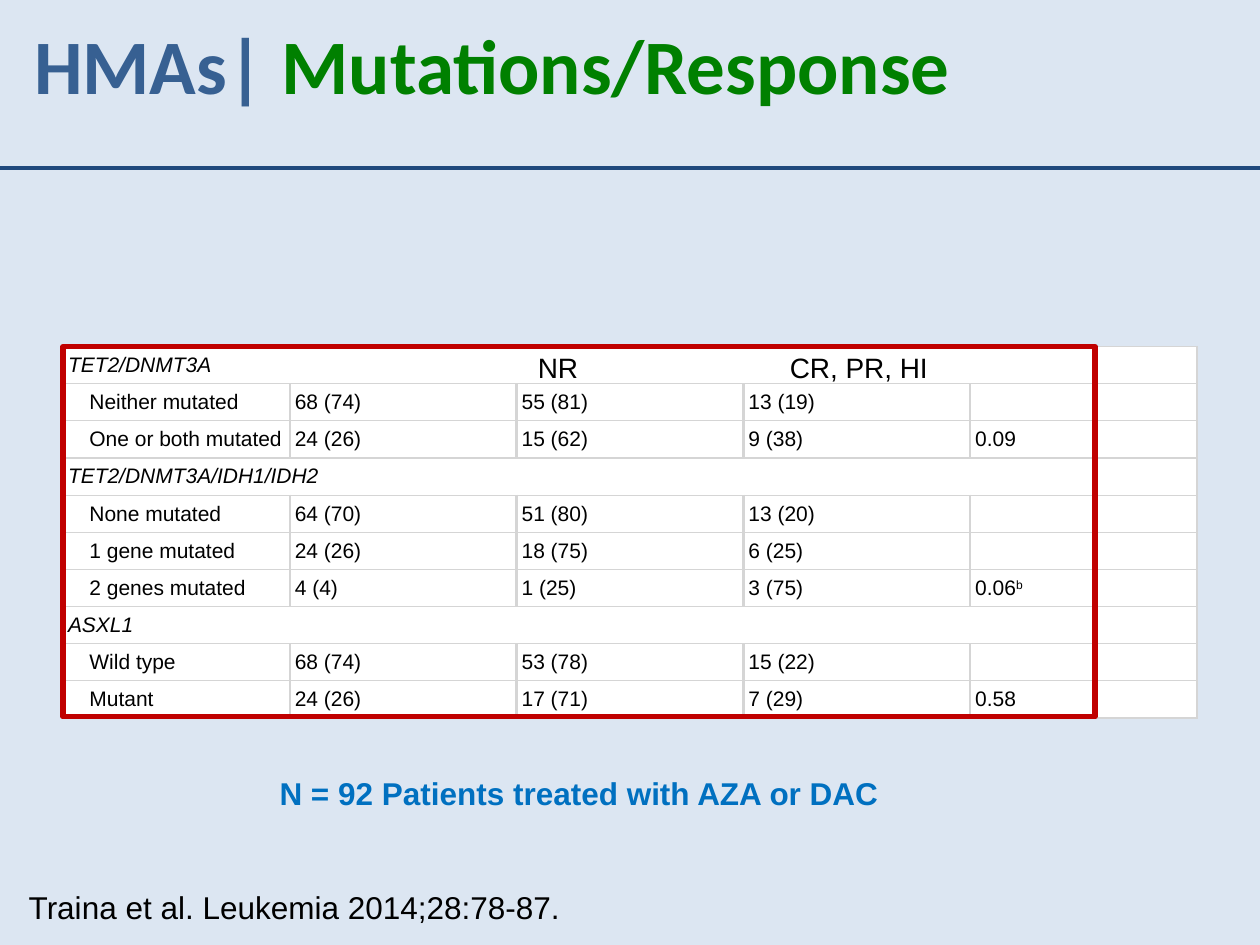
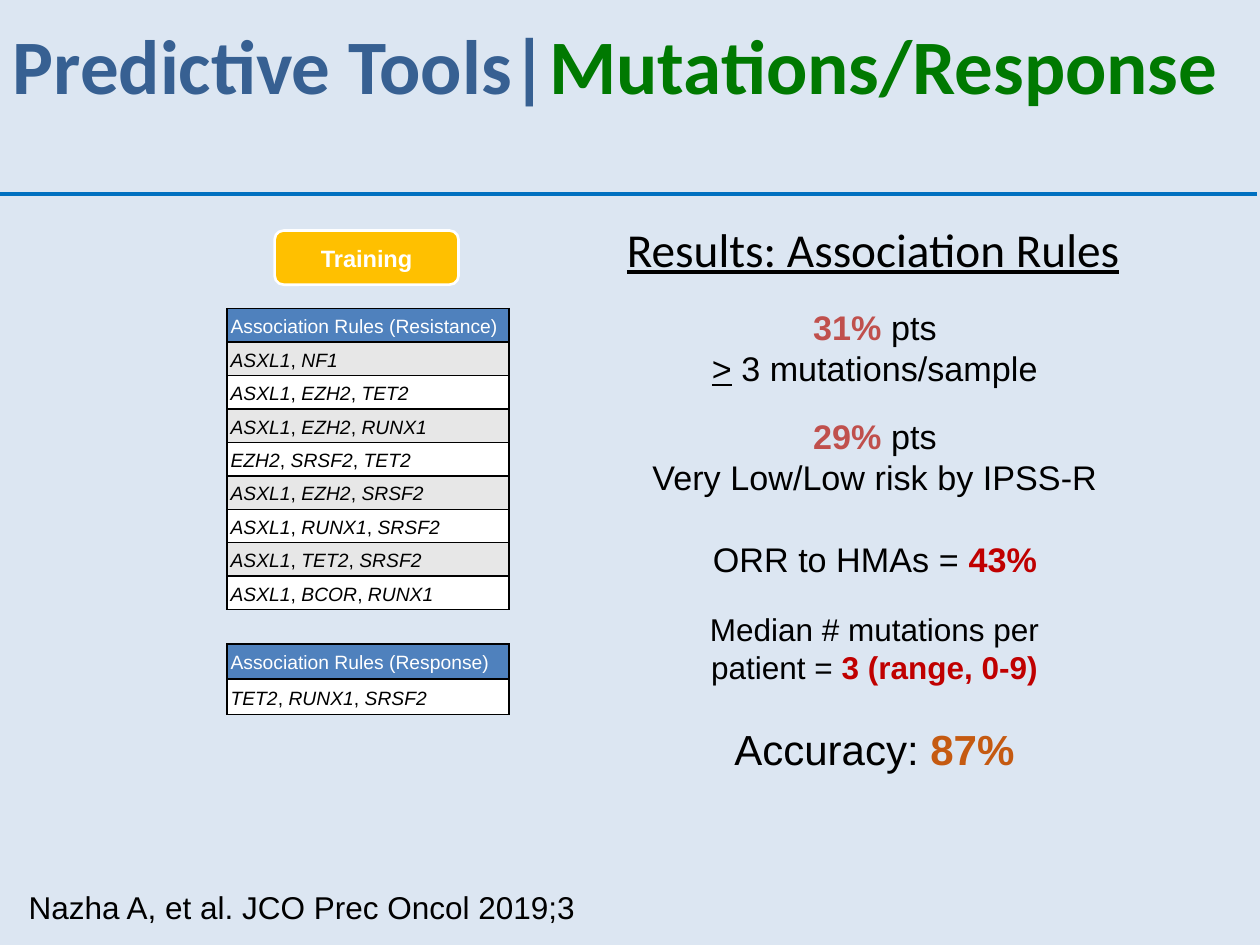
from typing import NamedTuple, Optional

import pptx
import pptx.dml.color
import pptx.enum.shapes
import pptx.enum.text
import pptx.oxml.ns
import pptx.util
from lxml import etree

Inches = pptx.util.Inches
Pt = pptx.util.Pt
qn = pptx.oxml.ns.qn
ALIGN = pptx.enum.text.PP_ALIGN
ANCHOR = pptx.enum.text.MSO_ANCHOR
SHAPE = pptx.enum.shapes.MSO_SHAPE

COLORS = {
    "background": "DCE6F2", "topic": "376092", "green": "008000", "dark_green": "007901",
    "navy": "1F497D", "blue": "0070C0", "black": "000000", "white": "FFFFFF",
    "grid": "D5D5D5", "header": "4F81BD", "band": "E7E7E7", "red": "C00000",
    "brick": "C0504D", "orange": "C55A11", "gold": "FFC000",
}


class Box(NamedTuple):
    left: float
    top: float
    width: float
    height: float

    def lengths(self) -> list:
        return [Inches(value) for value in self]


class Run(NamedTuple):
    text: str
    color: str = "black"
    bold: bool = False
    italic: bool = False
    underline: bool = False
    raised: bool = False


class Line(NamedTuple):
    runs: list
    size: float
    before: float = 0


class Borders(NamedTuple):
    color: str
    left: float
    right: float
    top: float
    bottom: float


class Mutations(NamedTuple):
    label: str
    values: tuple = ()
    footnote: str = ""


def rgb(name: str) -> pptx.dml.color.RGBColor:
    return pptx.dml.color.RGBColor.from_string(COLORS[name])


# Text
def write(paragraph, text: str, *, size: float, color: str = "black", font: str = "Arial",
          bold: bool = False, italic: bool = False, underline: bool = False,
          raised: bool = False) -> None:
    if not text:
        etree.SubElement(paragraph._p, qn("a:endParaRPr"), sz=str(int(size * 100)))
        return
    run = paragraph.add_run()
    run.text = text
    run.font.size, run.font.name = Pt(size), font
    run.font.bold, run.font.italic, run.font.underline = bold, italic, underline
    run.font.color.rgb = rgb(color)
    if raised:
        run._r.get_or_add_rPr().set("baseline", "30000")


def add_text(slide, box: Box, lines: list, *, align=ALIGN.LEFT, anchor=ANCHOR.TOP,
             font: str = "Arial"):
    frame = slide.shapes.add_textbox(*box.lengths()).text_frame
    frame.word_wrap, frame.vertical_anchor = True, anchor
    for index, line in enumerate(lines):
        paragraph = frame.add_paragraph() if index else frame.paragraphs[0]
        paragraph.alignment = align
        if line.before:
            paragraph.space_before = Pt(line.before)
        for run in line.runs:
            write(paragraph, size=line.size, font=font, **run._asdict())
    return frame


# Parts shared by the slides
def add_slide(deck, topic: str, title_left: float, title_color: str,
              rule_top: float, rule_right: float, rule_color: str, citation: str):
    slide = deck.slides.add_slide(deck.slide_layouts[5])
    slide.background.fill.solid()
    slide.background.fill.fore_color.rgb = rgb("background")

    title = slide.shapes.title
    title.left, title.top, title.width, title.height = Box(
        title_left, 0.09, 10 - title_left, 0.92).lengths()
    frame = title.text_frame
    frame.auto_size = pptx.enum.text.MSO_AUTO_SIZE.NONE
    frame.vertical_anchor = ANCHOR.TOP
    heading = frame.paragraphs[0]
    heading.alignment = ALIGN.LEFT
    for text, color in ((topic, "topic"), ("Mutations/Response", title_color)):
        write(heading, text, size=44, color=color, font="Calibri", bold=True)

    rule = slide.shapes.add_connector(
        pptx.enum.shapes.MSO_CONNECTOR.STRAIGHT,
        Inches(0), Inches(rule_top), Inches(rule_right), Inches(rule_top))
    rule.line.color.rgb, rule.line.width = rgb(rule_color), Pt(2.25)
    etree.SubElement(rule._element.spPr, qn("a:effectLst"))

    add_text(slide, Box(0.13, 7, 5, 0.4), [Line([Run(citation)], 18)])
    return slide


def add_frame(slide, preset, box: Box, line_color: str, line_width: float,
              fill: Optional[str] = None):
    shape = slide.shapes.add_shape(preset, *box.lengths())
    shape.shadow.inherit = False
    if fill:
        shape.fill.solid()
        shape.fill.fore_color.rgb = rgb(fill)
    else:
        shape.fill.background()
    shape.line.color.rgb, shape.line.width = rgb(line_color), Pt(line_width)
    return shape


# Tables
def add_table(slide, rows: int, columns: int, box: Box):
    table = slide.shapes.add_table(rows, columns, *box.lengths()).table
    table.first_row = table.horz_banding = False
    return table


def format_cell(cell, fill: str, borders: Borders, side: float, edge: float) -> None:
    cell.fill.solid()
    cell.fill.fore_color.rgb = rgb(fill)
    cell.vertical_anchor = ANCHOR.MIDDLE
    cell.margin_left = cell.margin_right = Inches(side)
    cell.margin_top = cell.margin_bottom = Inches(edge)
    widths = (borders.left, borders.right, borders.top, borders.bottom)
    for index, (tag, width) in enumerate(zip(("lnL", "lnR", "lnT", "lnB"), widths)):
        border = etree.Element(qn(f"a:{tag}"), w=str(Pt(width)))
        solid = etree.SubElement(border, qn("a:solidFill"))
        etree.SubElement(solid, qn("a:srgbClr"), val=COLORS[borders.color])
        cell._tc.get_or_add_tcPr().insert(index, border)


def add_response_table(slide, box: Box, groups: list) -> None:
    columns = 5
    table = add_table(slide, len(groups), columns, box)
    for row, group in enumerate(groups):
        is_heading = not group.values
        if is_heading:
            table.cell(row, 0).merge(table.cell(row, columns - 1))
        bottom = 1.5 if row == len(groups) - 1 else 0.75
        for column, text in enumerate((group.label, *group.values)):
            cell = table.cell(row, column)
            format_cell(cell, "white", Borders("grid", 1.5, 1.5, 0.75, bottom), 0.04, 0.04)
            if column == 0 and not is_heading:
                cell.margin_left = Inches(0.21)
            write(cell.text_frame.paragraphs[0], text, size=12, italic=is_heading)
        if group.footnote:
            write(cell.text_frame.paragraphs[0], group.footnote, size=12, raised=True)


def add_rules_table(slide, box: Box, outcome: str, rules: list) -> None:
    table = add_table(slide, len(rules) + 1, 1, box)
    fills = ["header"] + [("band", "white")[i % 2] for i in range(len(rules))]
    if len(rules) == 1:
        fills[1] = "white"
    for row, fill in enumerate(fills):
        cell = table.cell(row, 0)
        format_cell(cell, fill, Borders("black", 1, 1, 1, 1), 0.03, 0)
        paragraph = cell.text_frame.paragraphs[0]
        paragraph.line_spacing = 1.15
        if row == 0:
            write(paragraph, f"Association Rules ({outcome})", size=11, color="white")
            continue
        for index, gene in enumerate(rules[row - 1].split()):
            if index:
                write(paragraph, ", ", size=11)
            write(paragraph, gene, size=11, italic=True)


# Slide 1: mutations and response to HMAs
def build_hma_slide(deck) -> None:
    slide = add_slide(deck, "HMAs| ", 0.17, "green", 1.33, 10, "navy",
                      "Traina et al. Leukemia 2014;28:78-87.")
    add_response_table(slide, Box(0.5, 2.75, 9, 2.95), [
        Mutations("TET2/DNMT3A"),
        Mutations("Neither mutated", ("68 (74)", "55 (81)", "13 (19)", "")),
        Mutations("One or both mutated", ("24 (26)", "15 (62)", "9 (38)", "0.09")),
        Mutations("TET2/DNMT3A/IDH1/IDH2"),
        Mutations("None mutated", ("64 (70)", "51 (80)", "13 (20)", "")),
        Mutations("1 gene mutated", ("24 (26)", "18 (75)", "6 (25)", "")),
        Mutations("2 genes mutated", ("4 (4)", "1 (25)", "3 (75)", "0.06"), "b"),
        Mutations("ASXL1"),
        Mutations("Wild type", ("68 (74)", "53 (78)", "15 (22)", "")),
        Mutations("Mutant", ("24 (26)", "17 (71)", "7 (29)", "0.58")),
    ])
    add_frame(slide, SHAPE.RECTANGLE, Box(0.5, 2.75, 8.19, 2.94), "red", 3)
    add_text(slide, Box(2.12, 6.09, 5.75, 0.4),
             [Line([Run("N = 92 Patients treated with AZA or DAC", "blue", bold=True)], 18)])

    # Response headings, the second one on a tab stop
    responses = add_text(slide, Box(4.17, 2.73, 4.17, 0.37),
                         [Line([Run("NR\tCR, PR, HI")], 16)])
    stops = etree.SubElement(responses.paragraphs[0]._p.get_or_add_pPr(), qn("a:tabLst"))
    etree.SubElement(stops, qn("a:tab"), pos=str(Inches(2)), algn="l")


# Slide 2: association rules
def build_rules_slide(deck) -> None:
    slide = add_slide(deck, "Predictive Tools|", 0, "dark_green", 1.54, 9.98, "blue",
                      "Nazha A, et al. JCO Prec Oncol 2019;3")

    training = add_frame(slide, SHAPE.ROUNDED_RECTANGLE, Box(2.18, 1.83, 1.46, 0.43),
                         "white", 1.5, fill="gold")
    training.text_frame.vertical_anchor = ANCHOR.MIDDLE
    label = training.text_frame.paragraphs[0]
    label.alignment = ALIGN.CENTER
    write(label, "Training", size=13.5, color="white", bold=True)

    add_rules_table(slide, Box(1.8, 2.45, 2.24, 2.39), "Resistance", [
        "ASXL1 NF1", "ASXL1 EZH2 TET2", "ASXL1 EZH2 RUNX1", "EZH2 SRSF2 TET2",
        "ASXL1 EZH2 SRSF2", "ASXL1 RUNX1 SRSF2", "ASXL1 TET2 SRSF2", "ASXL1 BCOR RUNX1",
    ])
    add_rules_table(slide, Box(1.8, 5.11, 2.24, 0.56), "Response", ["TET2 RUNX1 SRSF2"])

    # Results column
    add_text(slide, Box(4.03, 1.69, 5.8, 0.56),
             [Line([Run("Results: Association Rules", underline=True)], 27)],
             align=ALIGN.CENTER, anchor=ANCHOR.MIDDLE, font="Calibri")
    results = [
        (Box(5.23, 2.38, 3.43, 1.41), [
            Line([Run("31% ", "brick", bold=True), Run("pts")], 19.5),
            Line([Run(">", underline=True), Run(" 3 mutations/sample")], 19.5)]),
        (Box(4.73, 3.25, 4.43, 1.41), [
            Line([Run("29% ", "brick", bold=True), Run("pts")], 19.5),
            Line([Run("Very Low/Low risk by IPSS-R")], 19.5),
            Line([Run("ORR to HMAs = "), Run("43%", "red", bold=True)], 19.5, before=23.5)]),
        (Box(5.5, 4.79, 2.88, 1.41), [
            Line([Run("Median # mutations per patient = "),
                  Run("3 (range, 0-9)", "red", bold=True)], 18),
            Line([Run("Accuracy: "), Run("87%", "orange", bold=True)], 24, before=21.8)]),
    ]
    for box, lines in results:
        add_text(slide, box, lines, align=ALIGN.CENTER)


def main() -> None:
    deck = pptx.Presentation()
    deck.slide_width, deck.slide_height = Inches(10), Inches(7.5)
    build_hma_slide(deck)
    build_rules_slide(deck)
    deck.save("out.pptx")


if __name__ == "__main__":
    main()
